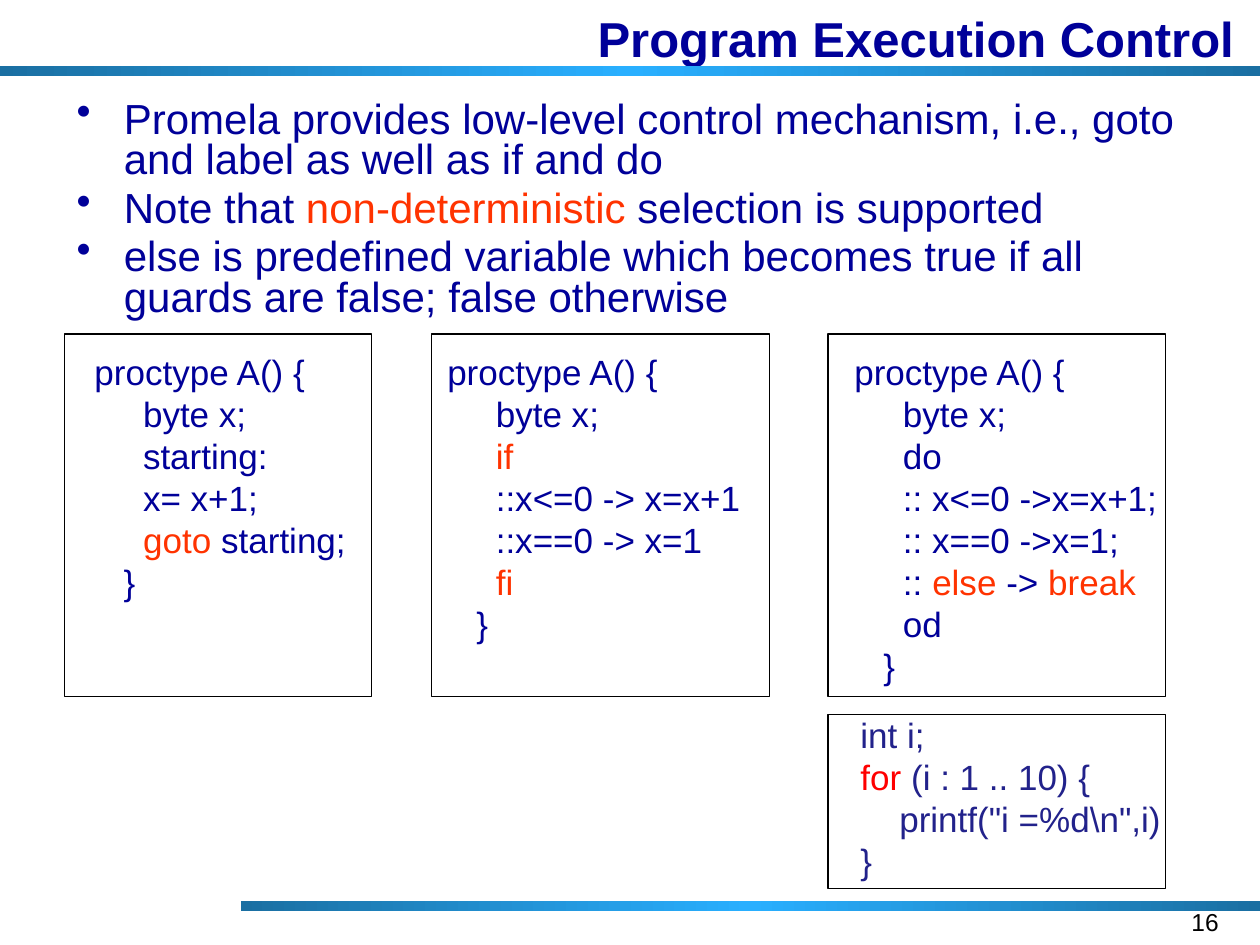
from copy import deepcopy
from dataclasses import dataclass

from pptx import Presentation
from pptx.dml.color import RGBColor as Rgb
from pptx.enum.shapes import MSO_SHAPE as Shape
from pptx.enum.text import MSO_ANCHOR as Anchor, PP_ALIGN as Align
from pptx.oxml.ns import qn
from pptx.oxml.xmlchemy import OxmlElement as Node
from pptx.util import Pt

FONT = "Arial"
NAVY = "000099"
RED = "FF3300"
MARK = "|"


@dataclass
class Box:
    left: float
    top: float
    width: float
    height: float


@dataclass
class Code:
    frame: Box
    area: Box
    lines: list[str]
    inset: float = 43.2
    color: str = NAVY
    accent: str = RED
    wrap: bool = True


def tint(target, code: str) -> None:
    target.rgb = Rgb.from_string(code)


def spot(box: Box) -> tuple:
    return Pt(box.left), Pt(box.top), Pt(box.width), Pt(box.height)


def style(para, size: float, color: str, bold: bool = False) -> None:
    font = para.font
    font.name, font.size, font.bold = FONT, Pt(size), bold
    tint(font.color, color)


def write(para, text: str, accent: str) -> None:
    for i, part in enumerate(text.split(MARK)):
        if part:
            run = para.add_run()
            run.text = part
            if i % 2:
                tint(run.font.color, accent)


def add_text(slide, box: Box, wrap: bool = True):
    frame = slide.shapes.add_textbox(*spot(box)).text_frame
    frame.word_wrap = wrap
    return frame


def fill_text(frame, lines: list[str], size: float, color: str, accent: str) -> None:
    for i, line in enumerate(lines):
        para = frame.add_paragraph() if i else frame.paragraphs[0]
        write(para, line, accent)
        style(para, size, color)


def add_rect(slide, box: Box):
    rect = slide.shapes.add_shape(Shape.RECTANGLE, *spot(box))
    rect.shadow.inherit = False
    return rect


def add_bar(slide, box: Box) -> None:
    bar = add_rect(slide, box)
    bar.line.fill.background()
    bar.fill.gradient()
    bar.fill.gradient_angle = 0
    stops = bar._element.spPr.find(qn("a:gradFill")).find(qn("a:gsLst"))
    stops.insert(1, deepcopy(stops[0]))
    hues = ("1A6FA2", "29AFFF", "1A6FA2")
    for stop, hue, pos in zip(bar.fill.gradient_stops, hues, (0, 0.5, 1)):
        tint(stop.color, hue)
        stop.position = pos


def add_title(slide, text: str) -> None:
    title = slide.shapes.title
    title.left, title.top, title.width, title.height = spot(Box(72, 0, 648, 43.2))
    title.text_frame.vertical_anchor = Anchor.MIDDLE
    para = title.text_frame.paragraphs[0]
    para.text = text
    para.alignment = Align.RIGHT
    style(para, 28, NAVY, True)


def add_list(slide, lines: list[str]) -> None:
    frame = add_text(slide, Box(36.7, 54.7, 648, 136))
    fill_text(frame, lines, 24, NAVY, RED)
    for i, para in enumerate(frame.paragraphs):
        para.line_spacing = 0.8
        para.space_before = Pt(4.8 if i else 0)
        props = para._p.get_or_add_pPr()
        props.set("marL", str(Pt(27)))
        props.set("indent", str(Pt(-27)))
        dot = Node("a:buChar")
        dot.set("char", "•")
        props.insert_element_before(dot, "a:tabLst", "a:defRPr", "a:extLst")


def add_code(slide, code: Code) -> None:
    frame = add_text(slide, code.area, code.wrap)
    frame.margin_left = Pt(code.inset)
    fill_text(frame, code.lines, 20, code.color, code.accent)
    rect = add_rect(slide, code.frame)
    rect.fill.background()
    tint(rect.line.color, "000000")
    rect.line.width = Pt(0.75)


BARS = [Box(0, 37.6, 720, 5.6), Box(137.6, 514.8, 582.4, 5.6)]

POINTS = [
    "Promela provides low-level control mechanism, i.e., goto and label as well as if and do",
    "Note that |non-deterministic| selection is supported",
    "else is predefined variable which becomes true if all guards are false; false otherwise",
]

TOP, TALL, WIDE = 190.8, 207.4, 193
HEAD = ["proctype A() {", "     byte x;"]
TAIL = ["   }"]

CODES = [
    Code(
        Box(36.7, TOP, 175.7, TALL),
        Box(10.8, 196.6, 201.6, 152.6),
        HEAD + ["     starting:", "     x= x+1;", "     |goto| starting;"] + TAIL,
    ),
    Code(
        Box(246.6, TOP, WIDE, TALL),
        Box(212.4, 196.6, 321.8, 177),
        HEAD
        + ["     |if|", "     ::x<=0 -> x=x+1", "     ::x==0 -> x=1", "     |fi|"]
        + TAIL,
    ),
    Code(
        Box(473.2, TOP, WIDE, TALL),
        Box(445, 196.6, 321.8, 201.6),
        HEAD
        + [
            "     do",
            "     :: x<=0 ->x=x+1;",
            "     :: x==0 ->x=1;",
            "     :: |else| -> |break|",
            "     od",
        ]
        + TAIL,
    ),
    Code(
        Box(473.2, 408.2, WIDE, 99.4),
        Box(484.6, 404, WIDE, 104.4),
        ["int i;", "|for |(i : 1 .. 10) {", '    printf("i =%d\\n",i)', "}"],
        inset=7.2,
        color="22228B",
        accent="FF0000",
        wrap=False,
    ),
]


def main() -> None:
    deck = Presentation()
    deck.slide_width, deck.slide_height = Pt(720), Pt(540)
    slide = deck.slides.add_slide(deck.slide_layouts[5])
    for bar in BARS:
        add_bar(slide, bar)
    add_title(slide, "Program Execution Control ")
    add_list(slide, POINTS)
    for code in CODES:
        add_code(slide, code)
    page = add_text(slide, Box(535.7, 514.8, 167.8, 25.2))
    fill_text(page, ["16"], 14, "000000", RED)
    page.paragraphs[0].alignment = Align.RIGHT
    deck.save("out.pptx")


if __name__ == "__main__":
    main()
